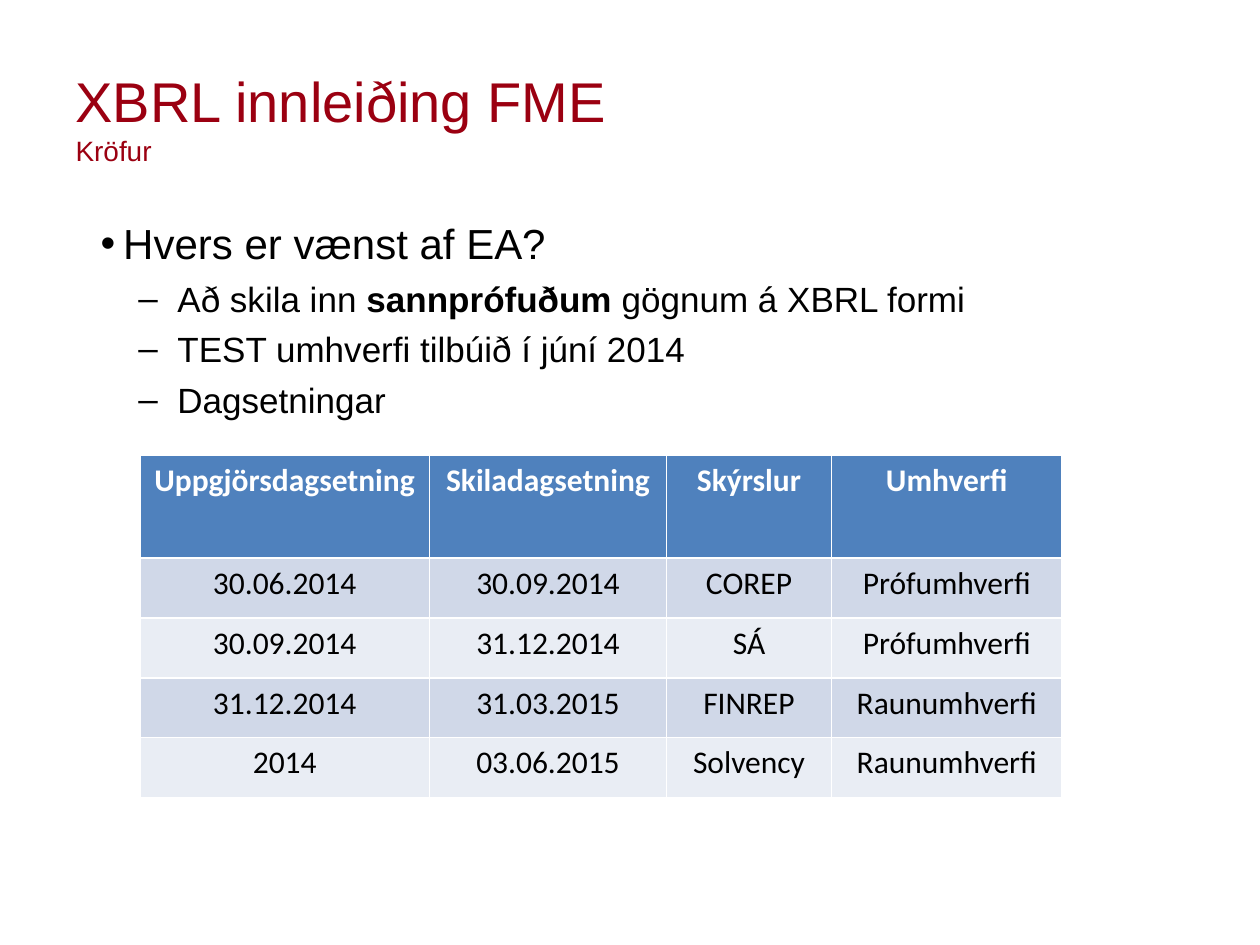
from copy import deepcopy

from pptx import Presentation
from pptx.dml.color import RGBColor
from pptx.enum.text import MSO_ANCHOR, PP_ALIGN
from pptx.oxml.ns import qn
from pptx.util import Inches, Pt

LEFT, CENTER = PP_ALIGN.LEFT, PP_ALIGN.CENTER
MIDDLE = MSO_ANCHOR.MIDDLE

DARK_RED = RGBColor(0x9B, 0x00, 0x11)
BLACK = RGBColor(0, 0, 0)
WHITE = RGBColor(0xFF, 0xFF, 0xFF)
HEADER_BLUE = RGBColor(0x4F, 0x81, 0xBD)
BANDS = (RGBColor(0xD0, 0xD8, 0xE8), RGBColor(0xE9, 0xED, 0xF4))

TITLE, SUBTITLE = "XBRL innleiðing FME", "Kröfur"

# Each bullet: level, then (text, bold) runs
BULLETS = [
    (0, [("Hvers er vænst af EA?", False)]),
    (1, [("Að skila inn ", False), ("sannprófuðum", True),
         (" gögnum á XBRL formi", False)]),
    (1, [("TEST umhverfi tilbúið í júní 2014", False)]),
    (1, [("Dagsetningar", False)]),
]
# Each level: character, text indent, hanging indent, font size, space before
LEVELS = [("•", 0.38, 0.18, 24, 0), ("–", 0.81, 0.31, 20, 5)]

TABLE_ROWS = [
    ("Uppgjörsdagsetning", "Skiladagsetning", "Skýrslur", "Umhverfi"),
    ("30.06.2014", "30.09.2014", "COREP", "Prófumhverfi"),
    ("30.09.2014", "31.12.2014", "SÁ", "Prófumhverfi"),
    ("31.12.2014", "31.03.2015", "FINREP", "Raunumhverfi"),
    ("2014", "03.06.2015", "Solvency", "Raunumhverfi"),
]
COLUMN_WIDTHS = (2.3, 1.88, 1.31, 1.83)
HEADER_HEIGHT, ROW_HEIGHT = 0.82, 0.475
MARGIN, CONTENT_WIDTH = 0.5, 9


def add_text(paragraph, text, size, color=BLACK, font="Arial", bold=False):
    run = paragraph.add_run()
    run.text = text
    run.font.name = font
    run.font.size = Pt(size)
    run.font.bold = bold
    run.font.color.rgb = color
    return run


def set_bullet(paragraph, character, indent, hanging):
    properties = paragraph._p.get_or_add_pPr()
    properties.set("marL", str(Inches(indent)))
    properties.set("indent", str(-Inches(hanging)))
    font = properties.makeelement(qn("a:buFont"), {"typeface": "Arial"})
    bullet = properties.makeelement(qn("a:buChar"), {"char": character})
    properties.extend([font, bullet])


def add_title(slide):
    title = slide.shapes.title
    title.left, title.top = Inches(MARGIN), Inches(0.3)
    title.width, title.height = Inches(CONTENT_WIDTH), Inches(1.25)
    title.text_frame.vertical_anchor = MIDDLE
    paragraph = title.text_frame.paragraphs[0]
    paragraph.alignment = LEFT
    heading = add_text(paragraph, TITLE, 32, DARK_RED)
    paragraph.add_line_break()
    line_break = paragraph._p.find(qn("a:br"))
    line_break.append(deepcopy(heading._r.rPr))  # keeps the first line at 32 pt
    add_text(paragraph, SUBTITLE, 16, DARK_RED)


def add_bullets(slide):
    box = slide.shapes.add_textbox(Inches(MARGIN), Inches(1.68),
                                   Inches(CONTENT_WIDTH), Inches(1.75))
    frame = box.text_frame
    frame.word_wrap = True
    for index, (level, runs) in enumerate(BULLETS):
        paragraph = frame.add_paragraph() if index else frame.paragraphs[0]
        character, indent, hanging, size, space = LEVELS[level]
        paragraph.level = level
        paragraph.space_before = Pt(space)
        set_bullet(paragraph, character, indent, hanging)
        for text, bold in runs:
            add_text(paragraph, text, size, bold=bold)


def add_schedule(slide):
    heights = [HEADER_HEIGHT] + [ROW_HEIGHT] * (len(TABLE_ROWS) - 1)
    table = slide.shapes.add_table(
        len(TABLE_ROWS), len(COLUMN_WIDTHS), Inches(1.11), Inches(3.61),
        Inches(sum(COLUMN_WIDTHS)), Inches(sum(heights))).table
    for column, width in zip(table.columns, COLUMN_WIDTHS):
        column.width = Inches(width)
    for row_index, (row, height) in enumerate(zip(table.rows, heights)):
        row.height = Inches(height)
        is_header = row_index == 0
        for cell, text in zip(row.cells, TABLE_ROWS[row_index]):
            cell.fill.solid()
            cell.fill.fore_color.rgb = (
                HEADER_BLUE if is_header else BANDS[(row_index - 1) % 2])
            paragraph = cell.text_frame.paragraphs[0]
            paragraph.alignment = CENTER
            add_text(paragraph, text, 18, WHITE if is_header else BLACK,
                     font="Calibri", bold=is_header)


def main():
    presentation = Presentation()
    presentation.slide_width, presentation.slide_height = Inches(10), Inches(7.5)
    slide = presentation.slides.add_slide(presentation.slide_layouts[5])
    add_title(slide)
    add_bullets(slide)
    add_schedule(slide)
    presentation.save("out.pptx")


if __name__ == "__main__":
    main()
